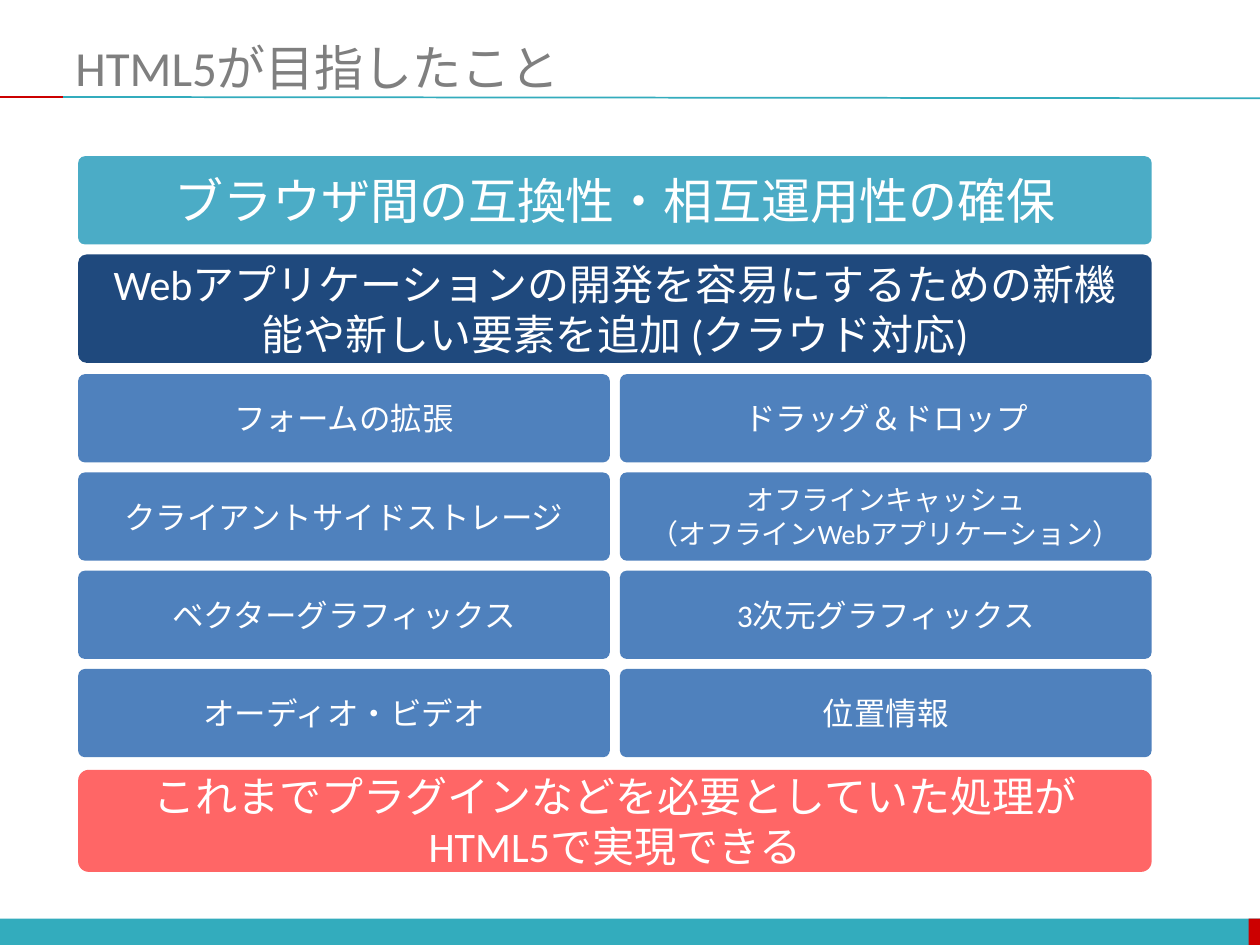
"""Build the slide on what HTML5 set out to achieve."""
from lxml.etree import SubElement
from pptx import Presentation
from pptx.dml.color import RGBColor
from pptx.enum.shapes import MSO_CONNECTOR, MSO_SHAPE
from pptx.enum.text import MSO_ANCHOR, PP_ALIGN
from pptx.oxml.ns import qn
from pptx.util import Inches, Pt

WHITE = RGBColor(0xFF, 0xFF, 0xFF)
GREY = RGBColor(0x7F, 0x7F, 0x7F)
TEAL = RGBColor(0x33, 0xAC, 0xBD)
RED = RGBColor(0xCC, 0x00, 0x00)
AQUA = RGBColor(0x4B, 0xAC, 0xC6)
NAVY = RGBColor(0x1F, 0x49, 0x7D)
BLUE = RGBColor(0x4F, 0x81, 0xBD)
CORAL = RGBColor(0xFF, 0x66, 0x66)

TITLE = "HTML5が目指したこと"
BANNERS = [
    ("ブラウザ間の互換性・相互運用性の確保", 1.24, 0.7, AQUA, 28, 0.077),
    ("Webアプリケーションの開発を容易にするための新機能や新しい要素を追加 (クラウド対応)",
     2.02, 0.86, NAVY, 24, 0.077),
    ("これまでプラグインなどを必要としていた処理がHTML5で実現できる",
     6.11, 0.81, CORAL, 24, 0.104),
]
FEATURES = [
    ("フォームの拡張", "ドラッグ＆ドロップ"),
    ("クライアントサイドストレージ",
     "オフラインキャッシュ\n（オフラインWebアプリケーション）"),
    ("ベクターグラフィックス", "3次元グラフィックス"),
    ("オーディオ・ビデオ", "位置情報"),
]
FOOTER = [(0, 10, TEAL), (9.91, 0.1, RED)]
RULES = [((0.5, 0.77), (10, 0.78), TEAL), ((0, 0.77), (0.5, 0.77), RED)]

LEFT, WIDTH, GAP = 0.62, 8.52, 0.08
CELL_WIDTH = (WIDTH - GAP) / 2
GRID_TOP, CELL_HEIGHT = 2.97, 0.7


def write(shape, text, size, color, align, inset):
    frame = shape.text_frame
    frame.word_wrap = True
    frame.vertical_anchor = MSO_ANCHOR.MIDDLE
    frame.margin_left = frame.margin_right = Inches(inset)
    frame.margin_top = frame.margin_bottom = 0
    frame.text = text
    for para in frame.paragraphs:
        para.alignment = align
        for span in para.runs:
            span.font.name = "Calibri"
            span.font.size = Pt(size)
            span.font.color.rgb = color


def add_block(page, kind, left, top, width, height, fill):
    shape = page.shapes.add_shape(
        kind, Inches(left), Inches(top), Inches(width), Inches(height))
    shape.shadow.inherit = False
    shape.fill.solid()
    shape.fill.fore_color.rgb = fill
    shape.line.fill.background()
    return shape


def add_card(page, text, left, top, width, height, fill, size, corner):
    card = add_block(
        page, MSO_SHAPE.ROUNDED_RECTANGLE, left, top, width, height, fill)
    card.adjustments[0] = corner
    write(card, text, size, WHITE, PP_ALIGN.CENTER, 0.15)


def add_rule(page, start, end, color):
    points = [Inches(value) for value in (*start, *end)]
    rule = page.shapes.add_connector(MSO_CONNECTOR.STRAIGHT, *points)
    rule.line.color.rgb = color
    rule.line.width = Pt(1)
    SubElement(rule._element.spPr, qn("a:effectLst"))


def main():
    deck = Presentation()
    deck.slide_width, deck.slide_height = Inches(10), Inches(7.5)
    page = deck.slides.add_slide(deck.slide_layouts[6])

    for left, width, color in FOOTER:
        add_block(page, MSO_SHAPE.RECTANGLE, left, 7.29, width, 0.22, color)
    for start, end, color in RULES:
        add_rule(page, start, end, color)

    title = page.shapes.add_textbox(
        Inches(0.5), Inches(0.3), Inches(9.5), Inches(0.46))
    write(title, TITLE, 28, GREY, PP_ALIGN.LEFT, 0.1)

    for text, top, height, fill, size, corner in BANNERS:
        add_card(page, text, LEFT, top, WIDTH, height, fill, size, corner)
    for row, features in enumerate(FEATURES):
        for column, text in enumerate(features):
            left = LEFT + column * (CELL_WIDTH + GAP)
            top = GRID_TOP + row * (CELL_HEIGHT + GAP)
            size = 16 if "\n" in text else 18
            add_card(page, text, left, top, CELL_WIDTH, CELL_HEIGHT,
                     BLUE, size, 0.077)

    deck.save("out.pptx")


if __name__ == "__main__":
    main()
